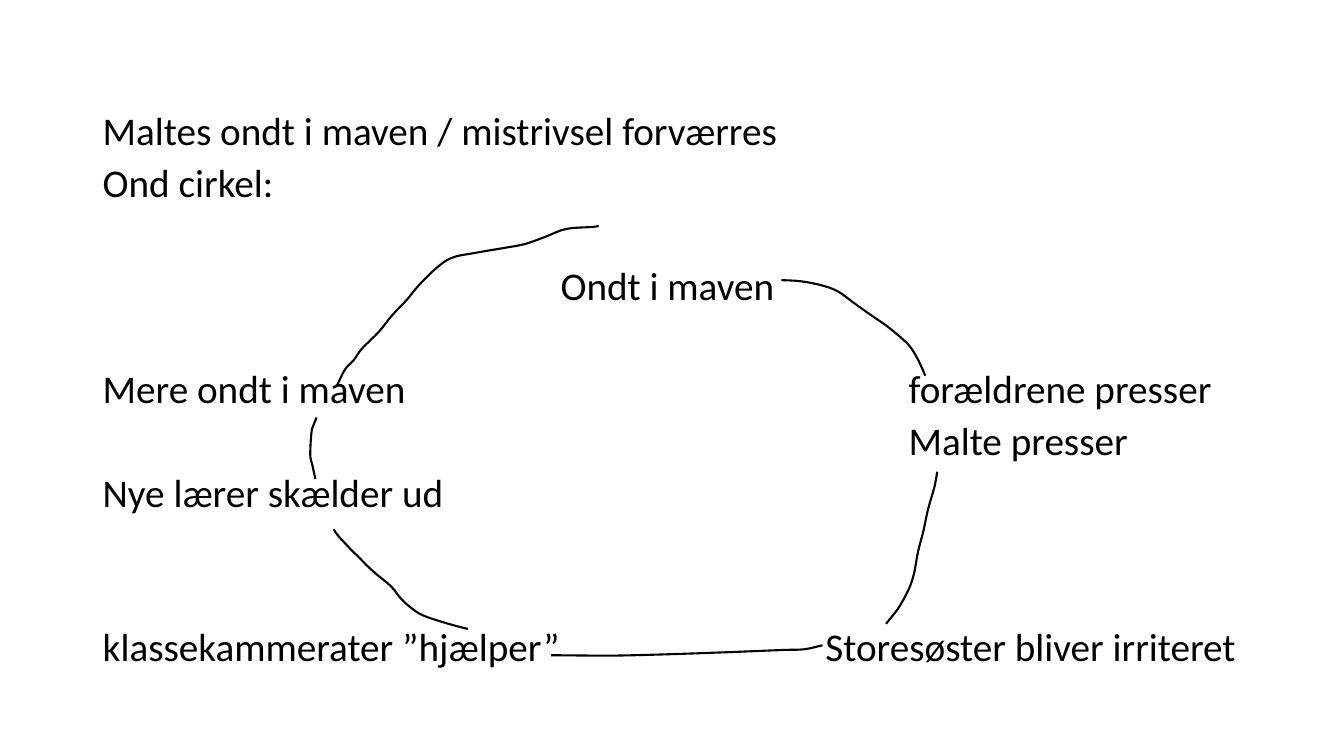
from pptx import Presentation
from pptx.dml.color import RGBColor
from pptx.util import Cm, Pt

BLACK = "000000"
FONT = "Calibri"
TOP_ROW, ROW_PITCH = 2.92, 1.3
CURVE_STEPS = 4

# Left edge in cm, row number, lines of text
STATEMENTS = [
    (2.59, 0, ["Maltes ondt i maven / mistrivsel forværres", "Ond cirkel:"]),
    (14.13, 3, ["Ondt i maven"]),
    (22.9, 5, ["forældrene presser", "Malte presser"]),
    (20.8, 10, ["Storesøster bliver irriteret"]),
    (2.59, 10, ["klassekammerater ”hjælper”"]),
    (2.59, 7, ["Nye lærer skælder ud"]),
    (2.59, 5, ["Mere ondt i maven"]),
]

PAIN_TO_PARENTS = [
    (19.69, 7.06), (20.19, 7.09), (20.7, 7.19), (21.11, 7.34), (21.54, 7.65), (21.92, 7.92),
    (22.3, 8.18), (22.53, 8.36), (22.73, 8.53), (22.94, 8.74), (23.14, 9.07), (23.32, 9.47),
]
PARENTS_TO_SISTER = [
    (23.62, 11.89), (23.55, 12.27), (23.39, 12.83), (23.27, 13.39), (23.14, 13.89),
    (23.04, 14.43), (22.94, 14.76), (22.78, 15.09), (22.61, 15.37), (22.33, 15.72),
]
SISTER_TO_CLASSMATES = [
    (20.73, 16.26), (20.27, 16.36), (19.69, 16.38), (18.47, 16.43), (17.04, 16.48),
    (15.5, 16.52), (13.89, 16.51),
]
CLASSMATES_TO_TEACHER = [
    (11.79, 15.85), (11.3, 15.72), (10.69, 15.52), (10.39, 15.34), (10.11, 15.09), (9.86, 14.78),
    (9.5, 14.48), (9.3, 14.3), (9.07, 14.07), (8.79, 13.79), (8.53, 13.51), (8.41, 13.34),
]
TEACHER_TO_MORE_PAIN = [
    (7.95, 12.07), (7.87, 11.71), (7.82, 11.46), (7.85, 10.9), (7.9, 10.72), (7.98, 10.52),
]
MORE_PAIN_TO_START = [
    (8.48, 9.75), (8.69, 9.32), (8.92, 9.07), (9.12, 8.79), (9.55, 8.36), (9.88, 7.95),
    (10.24, 7.57), (10.54, 7.21), (10.97, 6.78), (11.38, 6.5), (11.94, 6.38), (12.7, 6.25),
    (13.23, 6.15), (13.74, 5.97), (14.27, 5.77), (14.94, 5.72), (15.09, 5.69),
]
STROKES = [
    PAIN_TO_PARENTS, PARENTS_TO_SISTER, SISTER_TO_CLASSMATES,
    CLASSMATES_TO_TEACHER, TEACHER_TO_MORE_PAIN, MORE_PAIN_TO_START,
]


def color(hex_code):
    """Return the colour for a hex string."""
    return RGBColor.from_string(hex_code)


def add_statement(slide, left, row, lines):
    """Write lines of text starting on a row of the slide."""
    statement = slide.shapes.add_textbox(
        Cm(left), Cm(TOP_ROW + row * ROW_PITCH), Cm(32 - left), Cm(ROW_PITCH * len(lines)))
    frame = statement.text_frame
    frame.word_wrap = True
    frame.margin_left = frame.margin_right = frame.margin_top = frame.margin_bottom = 0
    frame.text = "\n".join(lines)
    for index, paragraph in enumerate(frame.paragraphs):
        paragraph.line_spacing = 0.8
        paragraph.space_before = Pt(10 if index else 0)
        paragraph.font.name = FONT
        paragraph.font.size = Pt(28)
        paragraph.font.color.rgb = color(BLACK)


def spline(before, start, end, after, t):
    """Return the Catmull-Rom value at t between start and end."""
    return 0.5 * (2 * start + (end - before) * t
                  + (2 * before - 5 * start + 4 * end - after) * t ** 2
                  + (3 * start - before - 3 * end + after) * t ** 3)


def smooth_points(points):
    """Return points along a smooth curve through the given points."""
    padded = [points[0], *points, points[-1]]
    curve = [
        tuple(Cm(spline(*axis, step / CURVE_STEPS)) for axis in zip(*padded[i:i + 4]))
        for i in range(len(points) - 1)
        for step in range(CURVE_STEPS)
    ]
    return curve + [tuple(Cm(value) for value in points[-1])]


def add_stroke(slide, points):
    """Draw a hand-drawn line through the points."""
    start, *rest = smooth_points(points)
    builder = slide.shapes.build_freeform(*start)
    builder.add_line_segments(rest, close=False)
    stroke = builder.convert_to_shape()
    stroke.shadow.inherit = False
    stroke.fill.background()
    stroke.line.color.rgb = color(BLACK)
    stroke.line.width = Pt(1.5)


def main():
    """Build the vicious circle slide."""
    deck = Presentation()
    deck.slide_width, deck.slide_height = Cm(33.87), Cm(19.05)
    slide = deck.slides.add_slide(deck.slide_layouts[6])
    for left, row, lines in STATEMENTS:
        add_statement(slide, left, row, lines)
    for points in STROKES:
        add_stroke(slide, points)
    deck.save("out.pptx")


if __name__ == "__main__":
    main()
